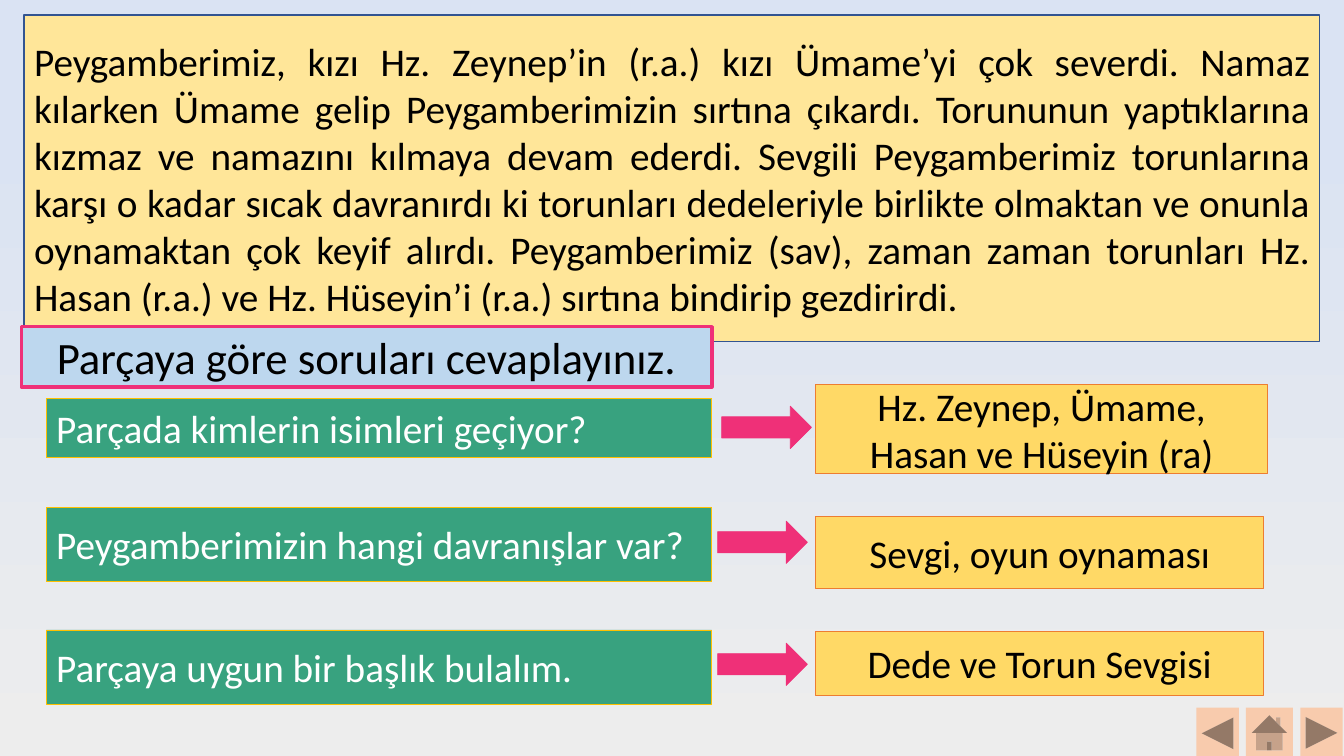
from dataclasses import dataclass
from typing import Optional

from pptx import Presentation
from pptx.dml.color import RGBColor
from pptx.enum.shapes import MSO_SHAPE
from pptx.enum.text import MSO_ANCHOR, PP_ALIGN
from pptx.util import Inches, Pt

SLIDE_WIDTH, SLIDE_HEIGHT = Inches(13.33), Inches(7.5)
FONT = "Calibri"
PINK = "EF3078"
BLACK = "000000"


@dataclass(frozen=True)
class Area:
    """Place and size in percent of the slide's width and height."""
    left: float
    top: float
    width: float
    height: float


@dataclass(frozen=True)
class Style:
    fill: str
    line: Optional[str] = None
    line_width: float = 0.5
    text: str = BLACK
    size: int = 28
    align: PP_ALIGN = PP_ALIGN.CENTER


@dataclass(frozen=True)
class Exercise:
    question: str
    question_area: Area
    arrow_area: Area
    answer: str
    answer_area: Area


PASSAGE = Style("FFE699", "325491", 1, align=PP_ALIGN.JUSTIFY)
HEADING = Style("BDD7EE", PINK, 2.25, size=32)
QUESTION = Style("38A27F", "FFC000", text="FFFFFF", align=PP_ALIGN.LEFT)
ARROW = Style(PINK, PINK)
ANSWER = Style("FFD966", "ED7D31")
NAVIGATION = Style("F8CBAD")

PASSAGE_TEXT = (
    "Peygamberimiz, kızı Hz. Zeynep’in (r.a.) kızı Ümame’yi çok severdi. "
    "Namaz kılarken Ümame gelip Peygamberimizin sırtına çıkardı. "
    "Torununun yaptıklarına kızmaz ve namazını kılmaya devam ederdi. "
    "Sevgili Peygamberimiz torunlarına karşı o kadar sıcak davranırdı ki "
    "torunları dedeleriyle birlikte olmaktan ve onunla oynamaktan çok keyif "
    "alırdı. Peygamberimiz (sav), zaman zaman torunları Hz. Hasan (r.a.) ve "
    "Hz. Hüseyin’i (r.a.) sırtına bindirip gezdirirdi."
)

EXERCISES = (
    Exercise("Parçada kimlerin isimleri geçiyor?", Area(3.45, 52.67, 49.5, 7.87),
             Area(53.7, 53.73, 6.68, 5.6),
             "Hz. Zeynep, Ümame, Hasan ve Hüseyin (ra)", Area(60.7, 50.8, 33.6, 11.87)),
    Exercise("Peygamberimizin hangi davranışlar var?", Area(3.45, 67.07, 49.5, 9.87),
             Area(53.4, 68.93, 6.68, 5.6),
             "Sevgi, oyun oynaması", Area(60.7, 68.27, 33.3, 9.6)),
    Exercise("Parçaya uygun bir başlık bulalım.", Area(3.45, 83.33, 49.5, 9.87),
             Area(53.4, 85.07, 6.68, 5.6),
             "Dede ve Torun Sevgisi", Area(60.7, 83.47, 33.3, 8.53)),
)

NAVIGATION_BUTTONS = (
    (MSO_SHAPE.ACTION_BUTTON_BACK_OR_PREVIOUS, Area(89.02, 93.6, 3.15, 6.8)),
    (MSO_SHAPE.ACTION_BUTTON_FORWARD_OR_NEXT, Area(96.75, 93.6, 3.15, 6.67)),
    (MSO_SHAPE.ACTION_BUTTON_HOME, Area(92.7, 93.6, 3.5, 6.67)),
)


def paint(color_format, hex_color: str) -> None:
    color_format.rgb = RGBColor.from_string(hex_color)


def paint_background(slide) -> None:
    fill = slide.background.fill
    fill.gradient()
    fill.gradient_angle = 90
    for stop, (position, color) in zip(fill.gradient_stops, ((0, "EDEDED"), (0.84, "DAE3F3"))):
        stop.position = position
        paint(stop.color, color)


def add_block(slide, area: Area, style: Style, text: str = "",
              preset: MSO_SHAPE = MSO_SHAPE.RECTANGLE) -> None:
    block = slide.shapes.add_shape(
        preset,
        round(SLIDE_WIDTH * area.left / 100), round(SLIDE_HEIGHT * area.top / 100),
        round(SLIDE_WIDTH * area.width / 100), round(SLIDE_HEIGHT * area.height / 100))
    block.shadow.inherit = False
    block.fill.solid()
    paint(block.fill.fore_color, style.fill)
    if style.line:
        paint(block.line.color, style.line)
        block.line.width = Pt(style.line_width)
    else:
        block.line.fill.background()
    if text:
        frame = block.text_frame
        frame.word_wrap = True
        frame.vertical_anchor = MSO_ANCHOR.MIDDLE
        paragraph = frame.paragraphs[0]
        paragraph.alignment = style.align
        run = paragraph.add_run()
        run.text = text
        run.font.name = FONT
        run.font.size = Pt(style.size)
        paint(run.font.color, style.text)


def main() -> None:
    presentation = Presentation()
    presentation.slide_width, presentation.slide_height = SLIDE_WIDTH, SLIDE_HEIGHT
    slide = presentation.slides.add_slide(presentation.slide_layouts[6])
    paint_background(slide)

    add_block(slide, Area(1.8, 2, 96.4, 43.2), PASSAGE, PASSAGE_TEXT)
    for exercise in EXERCISES:
        add_block(slide, exercise.question_area, QUESTION, exercise.question)
        add_block(slide, exercise.arrow_area, ARROW, preset=MSO_SHAPE.RIGHT_ARROW)
        add_block(slide, exercise.answer_area, ANSWER, exercise.answer)
    add_block(slide, Area(1.58, 43.2, 51.4, 8), HEADING, "Parçaya göre soruları cevaplayınız.")
    for preset, area in NAVIGATION_BUTTONS:
        add_block(slide, area, NAVIGATION, preset=preset)

    presentation.save("out.pptx")


if __name__ == "__main__":
    main()
